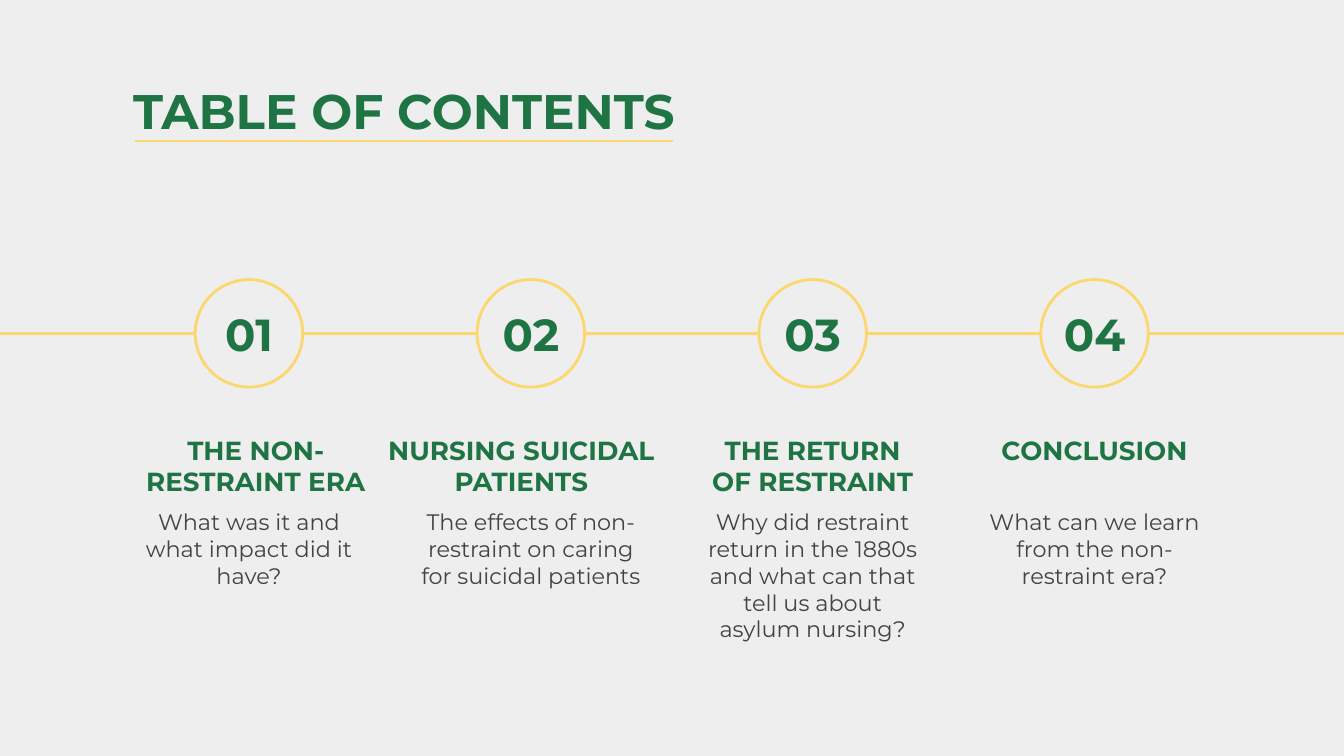
from collections import namedtuple

from lxml.etree import SubElement
from pptx import Presentation
from pptx.dml.color import RGBColor
from pptx.enum.shapes import MSO_CONNECTOR, MSO_SHAPE
from pptx.enum.text import MSO_ANCHOR, MSO_AUTO_SIZE, PP_ALIGN
from pptx.oxml.ns import qn
from pptx.util import Pt

GREEN = RGBColor(0x1F, 0x74, 0x44)
YELLOW = RGBColor(0xFB, 0xD7, 0x6D)
GRAY = RGBColor(0x43, 0x43, 0x43)
PAPER = RGBColor(0xEE, 0xEE, 0xEE)
FONT = "Montserrat"
LINE_WIDTH = Pt(1.5)

Box = namedtuple("Box", "left top width height")
Section = namedtuple("Section", "heading summary heading_shift heading_width")

SLIDE = Box(0, 0, 720, 405)
TITLE = Box(64.1, 36, 591, 45.4)
COLUMN = Box(66.8, 149.8, 133.2, 177.8)
COLUMN_STEP = 151
CIRCLE_SIZE = 57.6

SECTIONS = [
    Section("THE NON-RESTRAINT ERA",
            "What was it and what impact did it have?", 0, 140.4),
    Section("NURSING SUICIDAL PATIENTS",
            "The effects of non-restraint on caring for suicidal patients",
            -17.4, 157.7),
    Section("THE RETURN OF RESTRAINT",
            "Why did restraint return in the 1880s and what can that "
            "tell us about asylum nursing?", 0, 133.2),
    Section("CONCLUSION",
            "What can we learn from the non-restraint era?", 0, 133.2),
]


def place(shape, box):
    shape.left, shape.top, shape.width, shape.height = map(Pt, box)


def write(shape, text, size, color, bold=True,
          align=PP_ALIGN.CENTER, anchor=MSO_ANCHOR.TOP):
    frame = shape.text_frame
    frame.word_wrap = True
    frame.auto_size = MSO_AUTO_SIZE.NONE
    frame.vertical_anchor = anchor
    frame.margin_left = frame.margin_right = Pt(7.2)
    frame.margin_top = frame.margin_bottom = Pt(7.2)
    frame.text = text
    para = frame.paragraphs[0]
    para.alignment = align
    para.font.name = FONT
    para.font.size = Pt(size)
    para.font.bold = bold
    para.font.color.rgb = color


def add_text(page, box, text, size, color, **style):
    write(page.shapes.add_textbox(*map(Pt, box)), text, size, color, **style)


def add_rule(page, start, end, height):
    rule = page.shapes.add_connector(
        MSO_CONNECTOR.STRAIGHT, Pt(start), Pt(height), Pt(end), Pt(height))
    rule.line.color.rgb = YELLOW
    rule.line.width = LINE_WIDTH
    SubElement(rule._element.spPr, qn("a:effectLst"))


def add_title(page, box):
    title = page.shapes.title
    place(title, box)
    write(title, "TABLE OF CONTENTS", 26, GREEN, align=PP_ALIGN.LEFT)
    add_rule(page, box.left + 8, box.left + 296.6, box.top + 39.6)


def add_section(page, box, number, section):
    circle = page.shapes.add_shape(
        MSO_SHAPE.OVAL, Pt(box.left + (box.width - CIRCLE_SIZE) / 2),
        Pt(box.top), Pt(CIRCLE_SIZE), Pt(CIRCLE_SIZE))
    circle.shadow.inherit = False
    circle.fill.solid()
    circle.fill.fore_color.rgb = PAPER
    circle.line.color.rgb = YELLOW
    circle.line.width = LINE_WIDTH

    add_text(page, Box(box.left, box.top + 9.3, box.width, 39.6),
             f"{number:02}", 24, GREEN, anchor=MSO_ANCHOR.MIDDLE)
    add_text(page, Box(box.left + section.heading_shift, box.top + 75.6,
                       section.heading_width, 45.4),
             section.heading, 14, GREEN)
    add_text(page, Box(box.left, box.top + 115.2, box.width, 62.6),
             section.summary, 12, GRAY, bold=False)


def add_timeline(page, box):
    add_rule(page, SLIDE.left - 1.4, SLIDE.width + 1.4,
             box.top + CIRCLE_SIZE / 2)
    for index, section in enumerate(SECTIONS):
        column = box._replace(left=box.left + index * COLUMN_STEP)
        add_section(page, column, index + 1, section)


def main():
    deck = Presentation()
    deck.slide_width, deck.slide_height = Pt(SLIDE.width), Pt(SLIDE.height)
    page = deck.slides.add_slide(deck.slide_layouts.get_by_name("Title Only"))
    page.background.fill.solid()
    page.background.fill.fore_color.rgb = PAPER
    add_title(page, TITLE)
    add_timeline(page, COLUMN)
    deck.save("out.pptx")


if __name__ == "__main__":
    main()
